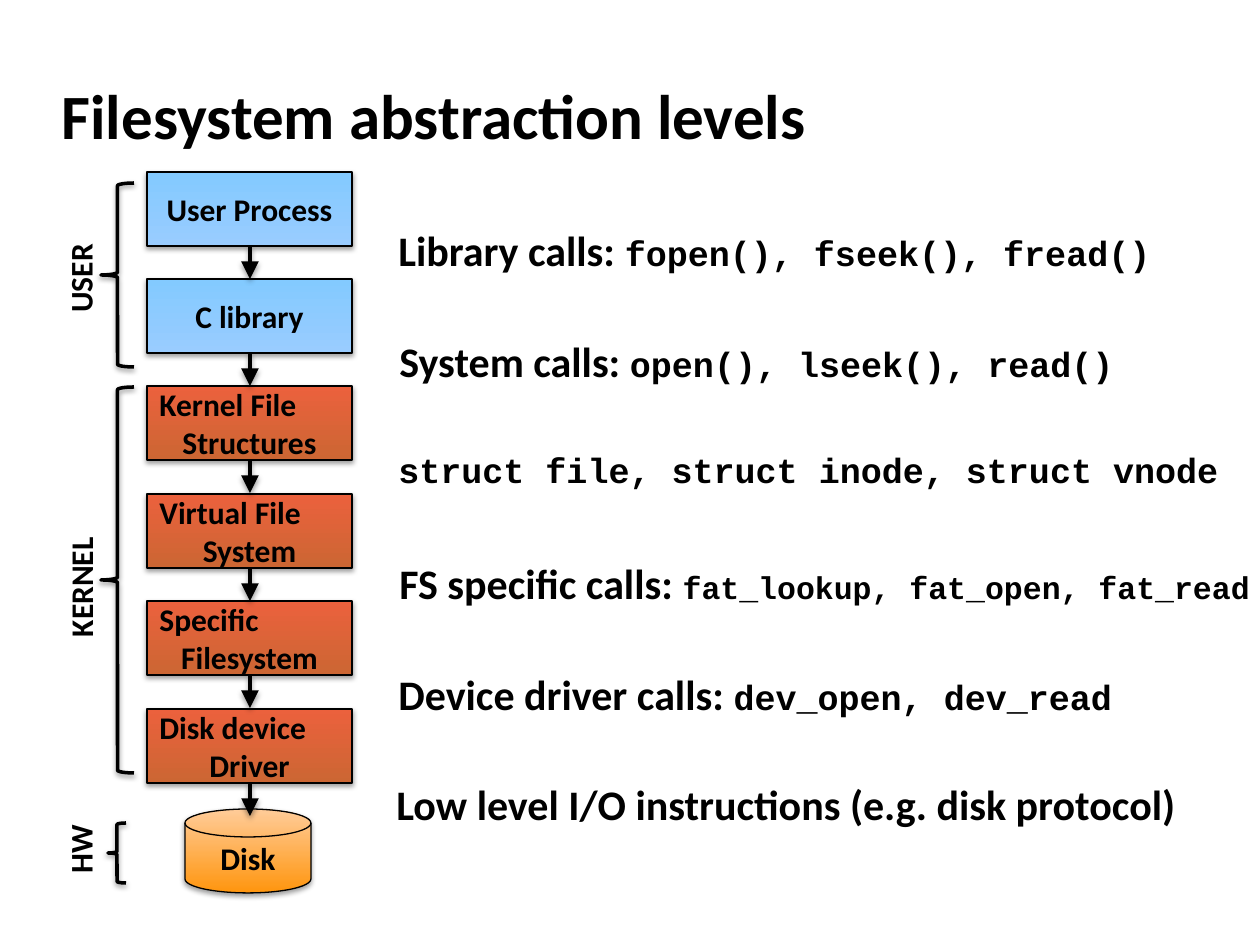
from dataclasses import dataclass

from lxml import etree
from pptx import Presentation
from pptx.dml.color import RGBColor
from pptx.enum.shapes import MSO_CONNECTOR, MSO_SHAPE
from pptx.enum.text import MSO_ANCHOR, MSO_AUTO_SIZE, PP_ALIGN
from pptx.oxml.ns import qn
from pptx.util import Emu, Pt

PX_EMU = 914400 / 126
PROCESS = MSO_SHAPE.FLOWCHART_PROCESS
DISK = MSO_SHAPE.FLOWCHART_MAGNETIC_DISK
BRACE = MSO_SHAPE.LEFT_BRACE
STRAIGHT = MSO_CONNECTOR.STRAIGHT
LEFT, CENTER = PP_ALIGN.LEFT, PP_ALIGN.CENTER
MIDDLE = MSO_ANCHOR.MIDDLE
FIXED_SIZE = MSO_AUTO_SIZE.NONE

BLACK = RGBColor(0x00, 0x00, 0x00)
BLUE = (RGBColor(0x99, 0xCC, 0xFF), RGBColor(0x83, 0xCA, 0xFF))
RED = (RGBColor(0xCC, 0x66, 0x33), RGBColor(0xEB, 0x61, 0x3D))
ORANGE = (RGBColor(0xFF, 0x95, 0x0E), RGBColor(0xFF, 0xCC, 0x99))
SANS, MONO = "Calibri", "Courier New"

BOX_X, BOX_Y, BOX_W, BOX_H = 147, 172, 205, 74
ARROW_X, ARROW_LEN = 250, 33


@dataclass
class Level:
    lines: list[str]
    colors: tuple[RGBColor, RGBColor]


@dataclass
class Call:
    x: int
    y: int
    w: int
    label: str
    code: str = ""
    code_size: int = 20


@dataclass
class Zone:
    name: str
    label: tuple[int, int, int, int]
    brace: tuple[int, int, int, int]


LEVELS = [
    Level(["User Process"], BLUE),
    Level(["C library"], BLUE),
    Level(["Kernel File", "Structures"], RED),
    Level(["Virtual File", "System"], RED),
    Level(["Specific", "Filesystem"], RED),
    Level(["Disk device", "Driver"], RED),
]
CALLS = [
    Call(386, 218, 778, "Library calls: ", "fopen(), fseek(), fread()"),
    Call(387, 329, 740, "System calls: ", "open(), lseek(), read()"),
    Call(386, 442, 846, "", "struct file, struct inode, struct vnode"),
    Call(387, 551, 873, "FS specific calls: ",
         "fat_lookup, fat_open, fat_read", 18),
    Call(386, 662, 740, "Device driver calls: ", "dev_open, dev_read"),
    Call(384, 772, 800, "Low level I/O instructions (e.g. disk protocol)"),
]
ZONES = [
    Zone("USER", (30, 250, 100, 50), (101, 183, 33, 184)),
    Zone("KERNEL", (18, 562, 125, 50), (101, 387, 33, 386)),
    Zone("HW", (40, 821, 80, 50), (108, 823, 18, 60)),
]


def px(n: int) -> Emu:
    return Emu(round(n * PX_EMU))


def format_run(r, size: int, font: str = SANS) -> None:
    r.font.size = Pt(size)
    r.font.name = font
    r.font.bold = True
    r.font.color.rgb = BLACK


def add_run(p, text: str, size: int, font: str = SANS) -> None:
    r = p.add_run()
    r.text = text
    format_run(r, size, font)


def add_shadow(sp) -> None:
    effects = etree.SubElement(sp._element.spPr, qn("a:effectLst"))
    shadow = etree.SubElement(effects, qn("a:outerShdw"), blurRad="39370",
                              dist="20320", dir="5400000", rotWithShape="0")
    color = etree.SubElement(shadow, qn("a:srgbClr"), val=str(BLACK))
    etree.SubElement(color, qn("a:alpha"), val="38000")


def set_line(sp, width: float) -> None:
    sp.line.color.rgb = BLACK
    sp.line.width = Pt(width)


def add_block(s, kind, x: int, y: int, w: int, h: int, level: Level) -> None:
    sp = s.shapes.add_shape(kind, px(x), px(y), px(w), px(h))
    sp.fill.gradient()
    sp.fill.gradient_angle = 90
    for stop, color in zip(sp.fill.gradient_stops, level.colors):
        stop.color.rgb = color
    set_line(sp, 0.75)
    add_shadow(sp)
    tf = sp.text_frame
    tf.vertical_anchor = MIDDLE
    tf.text = "\n".join(level.lines)
    for p in tf.paragraphs:
        p.alignment = LEFT
        format_run(p.runs[0], 18)
    tf.paragraphs[-1].alignment = CENTER


def add_arrow(s, x: int, y: int) -> None:
    line = s.shapes.add_connector(STRAIGHT, px(x), px(y),
                                  px(x), px(y + ARROW_LEN))
    set_line(line, 2)
    etree.SubElement(line.line._get_or_add_ln(), qn("a:tailEnd"),
                     type="triangle", w="lg", len="lg")
    add_shadow(line)


def add_text(s, x: int, y: int, w: int, h: int):
    sp = s.shapes.add_textbox(px(x), px(y), px(w), px(h))
    sp.text_frame.word_wrap = False
    sp.text_frame.auto_size = FIXED_SIZE
    return sp


def add_call(s, call: Call) -> None:
    p = add_text(s, call.x, call.y, call.w, 63).text_frame.paragraphs[0]
    if call.label:
        add_run(p, call.label, 24)
    if call.code:
        add_run(p, call.code, call.code_size, MONO)


def add_zone(s, zone: Zone) -> None:
    sp = add_text(s, *zone.label)
    sp.rotation = 270
    add_run(sp.text_frame.paragraphs[0], zone.name, 18)
    brace = s.shapes.add_shape(BRACE, *map(px, zone.brace))
    brace.fill.background()
    set_line(brace, 2)
    add_shadow(brace)


def add_title(s, text: str) -> None:
    title = s.shapes.title
    title.left, title.top = px(49), px(62)
    title.width, title.height = px(1046), px(105)
    tf = title.text_frame
    tf.text = text
    tf.vertical_anchor = MIDDLE
    tf.paragraphs[0].alignment = LEFT
    format_run(tf.paragraphs[0].runs[0], 36)


def main() -> None:
    prs = Presentation()
    prs.slide_width, prs.slide_height = px(1260), px(945)
    s = prs.slides.add_slide(prs.slide_layouts[5])
    add_title(s, "Filesystem abstraction levels")

    # Stack of levels, ending at the disk
    tops = [BOX_Y + i * 537 // 5 for i in range(len(LEVELS))]
    for y, level in zip(tops, LEVELS):
        add_block(s, PROCESS, BOX_X, y, BOX_W, BOX_H, level)
    add_block(s, DISK, 185, 809, 126, 84, Level(["Disk"], ORANGE))
    for y in tops:
        add_arrow(s, ARROW_X, y + BOX_H)

    # Calls between levels
    for call in CALLS:
        add_call(s, call)

    # Zones on the left
    for zone in ZONES:
        add_zone(s, zone)

    prs.save("out.pptx")


if __name__ == "__main__":
    main()
